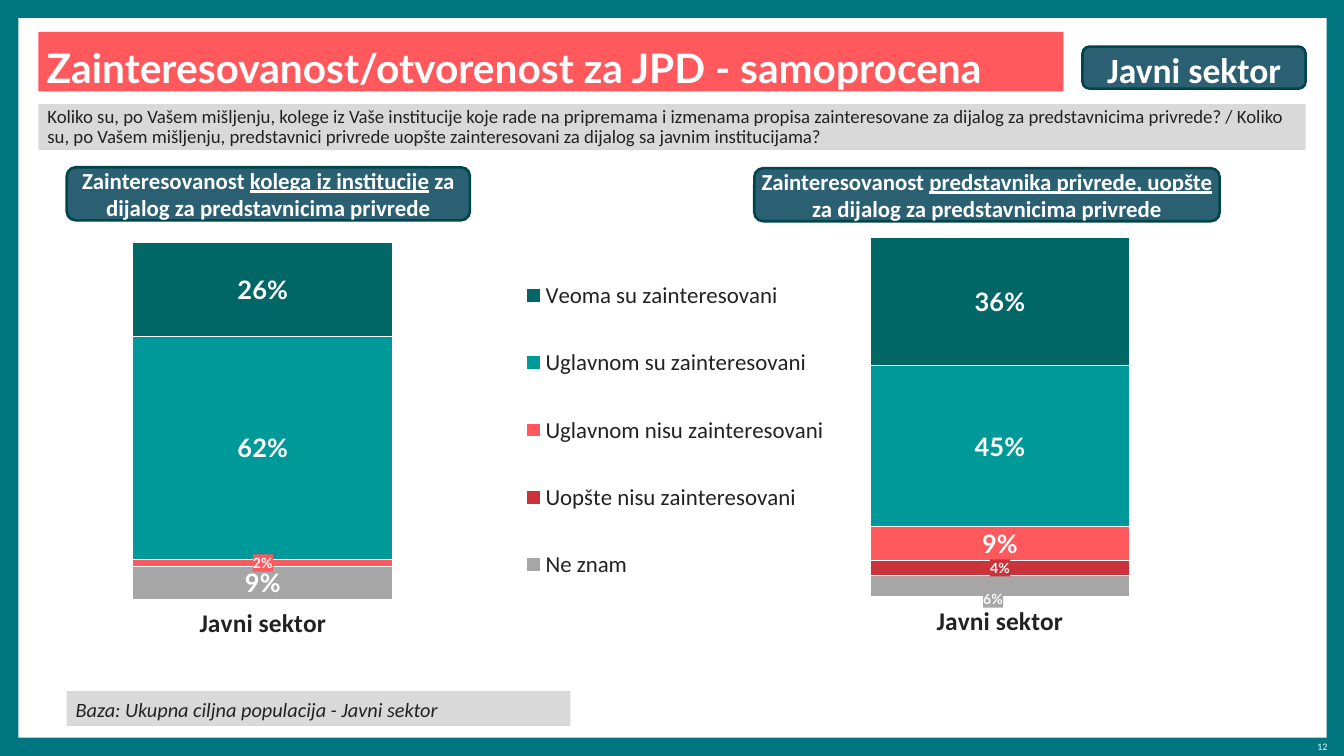
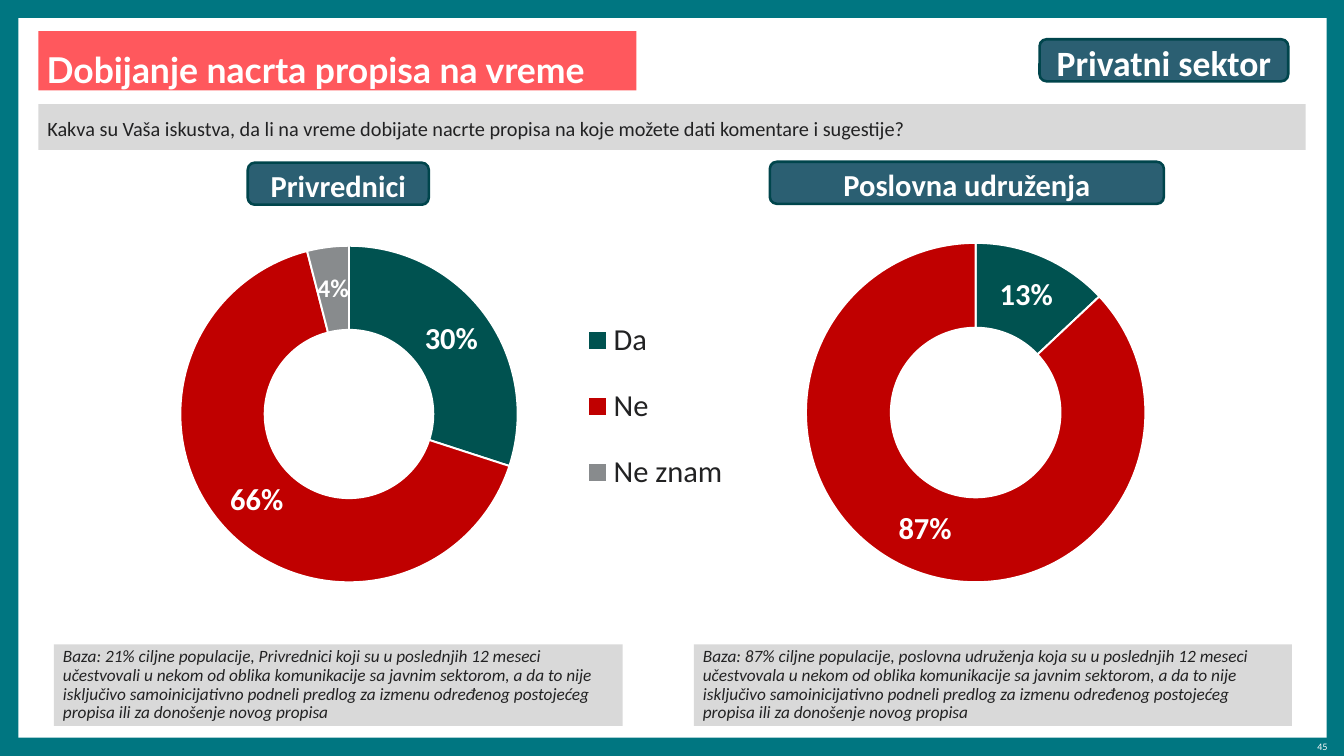
from copy import deepcopy

from pptx import Presentation
from pptx.chart.data import CategoryChartData
from pptx.dml.color import RGBColor
from pptx.enum.chart import XL_CHART_TYPE, XL_LEGEND_POSITION, XL_TICK_MARK
from pptx.enum.shapes import MSO_SHAPE
from pptx.enum.text import MSO_ANCHOR, PP_ALIGN
from pptx.oxml import parse_xml
from pptx.oxml.ns import nsdecls, qn
from pptx.util import Inches, Pt

RECT, ROUND = MSO_SHAPE.RECTANGLE, MSO_SHAPE.ROUNDED_RECTANGLE
LEFT, CENTER, RIGHT = PP_ALIGN.LEFT, PP_ALIGN.CENTER, PP_ALIGN.RIGHT
MIDDLE, TOP = MSO_ANCHOR.MIDDLE, MSO_ANCHOR.TOP
STACKED, DOUGHNUT = XL_CHART_TYPE.COLUMN_STACKED, XL_CHART_TYPE.DOUGHNUT
LEGEND_RIGHT, TICK_OUT = XL_LEGEND_POSITION.RIGHT, XL_TICK_MARK.OUTSIDE

BODY_FONT, HEAD_FONT = "Calibri", "Lato"
TEAL, WHITE, INK, CORAL = "007681", "FFFFFF", "222223", "FF585D"
BAND, PILL, PILL_LINE = "D9D9D9", "2B5F72", "00454C"
PANEL_AT = (0.2, 0.2, 14.31, 7.87)
PAGE_AT = (13.73, 8.1, 0.79, 0.13)
QUESTION_AT = (0.42, 1.14, 13.86, 0.5)
PILL_HEIGHT = 0.46

ANSWER_COLORS = {
    "Ne znam": "A6A6A6",
    "Uopšte nisu zainteresovani": "CB333B",
    "Uglavnom nisu zainteresovani": CORAL,
    "Uglavnom su zainteresovani": "009999",
    "Veoma su zainteresovani": "006666",
}
YES_NO_COLORS = {"Da": "005250", "Ne": "C00000", "Ne znam": "888B8D"}


def rgb(value):
    return RGBColor.from_string(value)


def box(left, top, width, height):
    return [Inches(v) for v in (left, top, width, height)]


def style_font(font, size, color, name=BODY_FONT, bold=False, italic=False):
    font.size, font.name, font.bold, font.italic = Pt(size), name, bold, italic
    font.color.rgb = rgb(color)


def write(tf, text, align=LEFT, anchor=MIDDLE, insets=(0, 0, 0, 0), spacing=None,
          before=0, after=0, **font):
    """Fill a text frame; in a list of strings every second one is underlined."""
    tf.word_wrap, tf.vertical_anchor = True, anchor
    tf.margin_left, tf.margin_top, tf.margin_right, tf.margin_bottom = box(*insets)
    p = tf.paragraphs[0]
    p.alignment, p.line_spacing = align, spacing
    p.space_before, p.space_after = Pt(before), Pt(after)
    parts = [text] if isinstance(text, str) else text
    for i, part in enumerate(parts):
        r = p.add_run()
        r.text = part
        style_font(r.font, **font)
        if i % 2:
            r.font.underline = True


def fill_solid(fill, color):
    fill.solid()
    fill.fore_color.rgb = rgb(color)


def paint(fmt, color, line_width):
    fill_solid(fmt.fill, color)
    fmt.line.color.rgb, fmt.line.width = rgb(WHITE), Pt(line_width)


def manual_layout(settings):
    """Build a c:layout element from (tag, value) pairs in schema order."""
    tags = "".join(f'<c:{tag} val="{value}"/>' for tag, value in settings)
    return parse_xml(f'<c:layout {nsdecls("c")}><c:manualLayout>{tags}'
                     '</c:manualLayout></c:layout>')


def place(parent, index, frame, target=()):
    """Fix a chart part at frame: x, y, width and height as chart fractions."""
    for old in parent.findall(qn("c:layout")):
        parent.remove(old)
    edges = [("xMode", "edge"), ("yMode", "edge")]
    parent.insert(index, manual_layout([*target, *edges, *zip("xywh", frame)]))


def labels_element(chart, series_index):
    series = list(chart.element.iter(qn("c:ser")))[series_index]
    return series.find(qn("c:dLbls"))


def label_series(chart, series_index, size, name=HEAD_FONT, fill=None):
    labels = chart.plots[0].series[series_index].data_labels
    labels.show_value = True
    labels.number_format, labels.number_format_is_linked = '#"%"', False
    style_font(labels.font, size, WHITE, name, bold=True)
    if fill:
        background = parse_xml(f'<c:spPr {nsdecls("c", "a")}><a:solidFill>'
                               f'<a:srgbClr val="{fill}"/></a:solidFill></c:spPr>')
        number_format = labels_element(chart, series_index).find(qn("c:numFmt"))
        number_format.addnext(background)


def adjust_label(chart, series_index, point_index, size, offset=None):
    """Copy the series label format to one point, with its own size and offset."""
    labels = labels_element(chart, series_index)
    label = parse_xml(f'<c:dLbl {nsdecls("c")}><c:idx val="{point_index}"/></c:dLbl>')
    if offset:
        label.append(manual_layout(zip("xy", offset)))
    for setting in labels:
        if setting.tag != qn("c:showLeaderLines"):
            label.append(deepcopy(setting))
    for font in label.iter(qn("a:defRPr")):
        font.set("sz", str(size * 100))
    labels.insert(0, label)


class Deck:
    """The shared style, and the slide being built."""

    def __init__(self):
        self.prs = Presentation()
        self.prs.slide_width, self.prs.slide_height = Inches(14.7), Inches(8.27)
        fill_solid(self.prs.slide_master.background.fill, TEAL)

    def slide(self, number, title, at, size):
        self.s = self.prs.slides.add_slide(self.prs.slide_layouts[5])
        heading = self.s.shapes.title
        heading.left, heading.top, heading.width, heading.height = box(*at)
        fill_solid(heading.fill, CORAL)
        write(heading.text_frame, title, insets=(0.09, 0.08, 0.09, 0), spacing=Pt(41),
              size=size, color=WHITE, name=HEAD_FONT, bold=True)
        panel = self.shape(RECT, PANEL_AT, WHITE)
        heading.element.addprevious(panel.element)
        page = self.s.shapes.add_textbox(*box(*PAGE_AT))
        write(page.text_frame, str(number), align=RIGHT, anchor=TOP, spacing=1.1,
              size=7, color=WHITE, name=HEAD_FONT)

    def shape(self, kind, at, fill, line=None):
        sp = self.s.shapes.add_shape(kind, *box(*at))
        sp.shadow.inherit = False
        fill_solid(sp.fill, fill)
        if line:
            sp.line.color.rgb, sp.line.width = rgb(line), Pt(2)
        else:
            sp.line.fill.background()
        return sp

    def band(self, text, at, size=16, spacing=1.1, italic=False):
        sp = self.shape(RECT, at, BAND)
        write(sp.text_frame, text, insets=(0.1, 0, 0.1, 0), spacing=spacing,
              before=6, after=6, size=size, color=INK, italic=italic)

    def pill(self, text, at, size, inset=0.04, spacing=1.1, before=24):
        sp = self.shape(ROUND, at, PILL, PILL_LINE)
        write(sp.text_frame, text, align=CENTER, insets=[inset] * 4, spacing=spacing,
              before=before, size=size, color=WHITE, bold=True)

    def chart(self, kind, at, categories, rows, plot, legend=None, legend_size=18):
        """Add a chart; rows maps series names to values, plot and legend are frames."""
        data = CategoryChartData()
        data.categories = categories
        for name, values in rows.items():
            data.add_series(name, values)
        chart = self.s.shapes.add_chart(kind, *box(*at), data).chart
        chart.has_title = False
        style_font(chart.font, 18, INK, HEAD_FONT)
        body = chart.element.find(qn("c:chart"))
        place(body.find(qn("c:plotArea")), 0, plot, [("layoutTarget", "inner")])
        chart.has_legend = legend is not None
        if legend:
            chart.legend.position = LEGEND_RIGHT
            chart.legend.include_in_layout = False
            style_font(chart.legend.font, legend_size, INK)
            place(body.find(qn("c:legend")), 1, legend)
        return chart

    def stacked(self, at, values, plot, small=(), legend=None):
        """One stacked column; the answers in small get small filled labels."""
        rows = {answer: [value] for answer, value in zip(ANSWER_COLORS, values)}
        chart = self.chart(STACKED, at, ["Javni sektor"], rows, plot, legend)
        bars = chart.plots[0]
        bars.gap_width, bars.overlap = 50, 100
        axis = chart.value_axis
        axis.minimum_scale, axis.maximum_scale, axis.major_unit = 0, 100, 20
        axis.has_major_gridlines = axis.visible = False
        axis = chart.category_axis
        axis.major_tick_mark = TICK_OUT
        axis.format.line.fill.background()
        style_font(axis.tick_labels.font, 20, INK, bold=True)
        for i, (answer, color) in enumerate(ANSWER_COLORS.items()):
            paint(bars.series[i].format, color, 0.75)
            if answer in small:
                label_series(chart, i, 11, fill=color)
            elif values[i]:
                label_series(chart, i, 20)
        return chart

    def doughnut(self, at, values, plot, legend=None):
        categories = list(YES_NO_COLORS)[:len(values)]
        chart = self.chart(DOUGHNUT, at, categories, {"Odgovori": values}, plot, legend, 24)
        for hole in chart.element.iter(qn("c:holeSize")):
            hole.set("val", "45")
        points = chart.plots[0].series[0].points
        for i, category in enumerate(categories):
            paint(points[i].format, YES_NO_COLORS[category], 1.5)
        label_series(chart, 0, 24, BODY_FONT)
        return chart


def interest_slide(deck):
    deck.slide(12, "Zainteresovanost/otvorenost za JPD - samoprocena",
               (0.42, 0.35, 11.21, 0.65), 32)
    deck.band("Koliko su, po Vašem mišljenju, kolege iz Vaše institucije koje rade na "
              "pripremama i izmenama propisa zainteresovane za dijalog za predstavnicima "
              "privrede? / Koliko su, po Vašem mišljenju, predstavnici privrede uopšte "
              "zainteresovani za dijalog sa javnim institucijama?",
              QUESTION_AT, size=14.8, spacing=0.9)
    deck.pill("Javni sektor", (11.84, 0.51, 2.44, PILL_HEIGHT), 28)
    deck.stacked((0.37, 2.33, 7.48, 4.8), [9, 0, 2, 62, 26], (0.05, 0.06, 0.57, 0.82),
                 small=["Uglavnom nisu zainteresovani"])
    chart = deck.stacked((5.59, 2.59, 7.48, 4.8), [6, 4, 9.4, 45, 36],
                         (0.43, 0, 0.57, 0.82),
                         small=["Ne znam", "Uopšte nisu zainteresovani"],
                         legend=(0.01, 0.01, 0.46, 0.86))
    dont_know = list(ANSWER_COLORS).index("Ne znam")
    adjust_label(chart, dont_know, 0, 11, offset=(-0.01, 0.03))
    for topic, at in (("kolega iz institucije", (0.73, 1.83, 4.41, 0.58)),
                      ("predstavnika privrede, uopšte", (8.25, 1.84, 5.09, 0.58))):
        deck.pill(["Zainteresovanost ", topic, " za dijalog za predstavnicima privrede"],
                  at, 18, inset=0, spacing=1, before=0)
    deck.band("Baza: Ukupna ciljna populacija - Javni sektor",
              (0.73, 7.56, 5.51, 0.38), italic=True)


def drafts_slide(deck):
    deck.slide(45, "Dobijanje nacrta propisa na vreme", (0.42, 0.34, 6.54, 0.65), 28)
    deck.band("Kakva su Vaša iskustva, da li na vreme dobijate nacrte propisa na koje "
              "možete dati komentare i sugestije?", QUESTION_AT)
    for text, left, top, width, size in (("Privatni sektor", 11.37, 0.43, 2.72, 28),
                                         ("Privrednici", 2.71, 1.78, 1.98, 24),
                                         ("Poslovna udruženja", 8.42, 1.77, 4.31, 24)):
        deck.pill(text, (left, top, width, PILL_HEIGHT), size)
    deck.doughnut((6.96, 2.09, 6.4, 4.29), [13, 87], (0.29, 0.13, 0.58, 0.87))
    chart = deck.doughnut((0.44, 2.09, 7.59, 4.29), [30, 66, 4], (0.18, 0.14, 0.53, 0.86),
                          legend=(0.78, 0.26, 0.22, 0.58))
    dont_know = list(YES_NO_COLORS).index("Ne znam")
    adjust_label(chart, 0, dont_know, 20)
    for left, width, group in (
            (0.59, 6.22, "21% ciljne populacije, Privrednici koji su u poslednjih 12 meseci "
                         "učestvovali"),
            (7.59, 6.54, "87% ciljne populacije, poslovna udruženja koja su u poslednjih 12 "
                         "meseci učestvovala")):
        deck.band(f"Baza: {group} u nekom od oblika komunikacije sa javnim sektorom, a da to "
                  "nije isključivo samoinicijativno podneli predlog za izmenu određenog "
                  "postojećeg propisa ili za donošenje novog propisa",
                  (left, 7.05, width, 0.89), size=13.6, spacing=0.9, italic=True)


def main():
    deck = Deck()
    interest_slide(deck)
    drafts_slide(deck)
    deck.prs.save("out.pptx")


if __name__ == "__main__":
    main()
